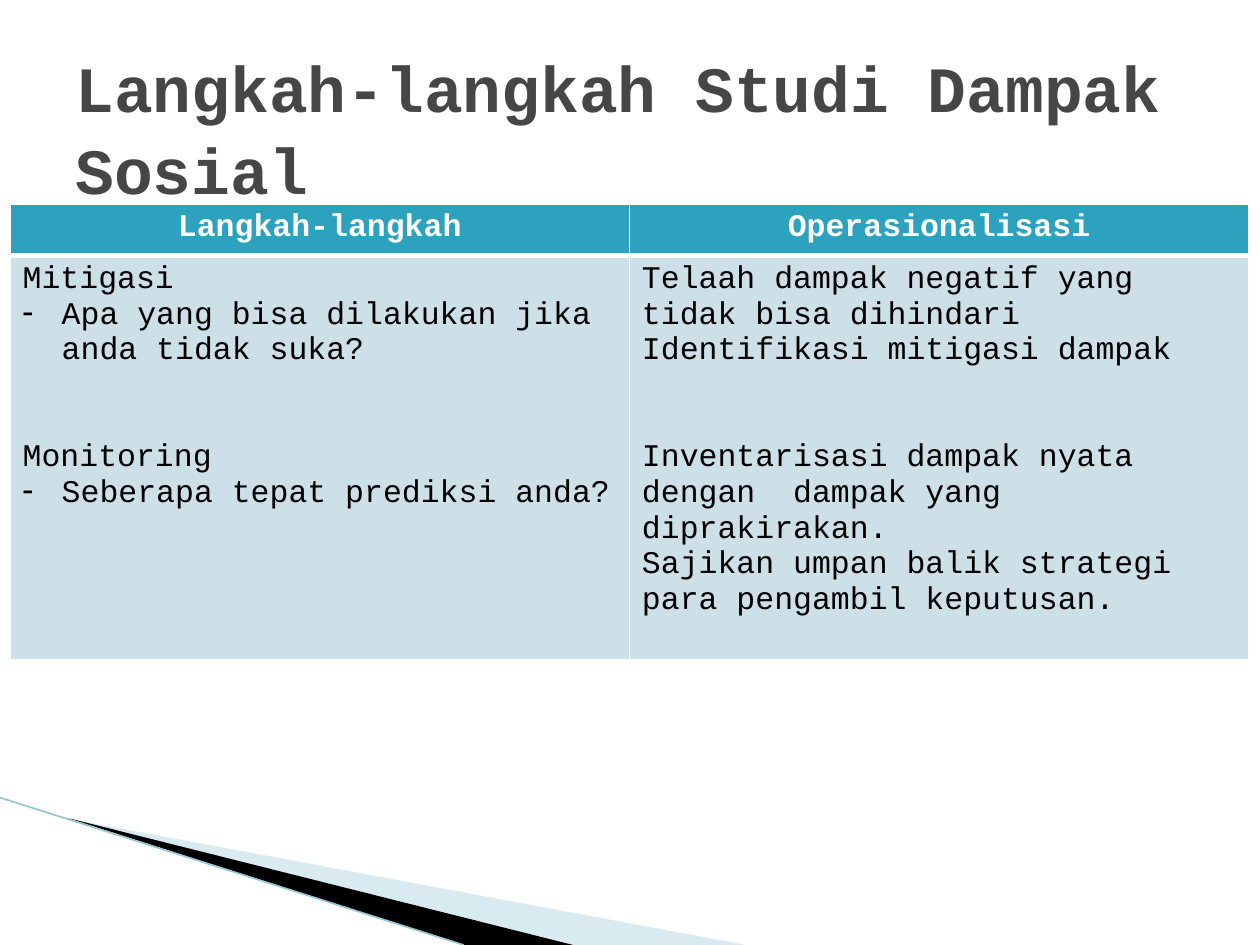
from lxml.etree import SubElement
from pptx import Presentation
from pptx.dml.color import RGBColor
from pptx.enum.shapes import MSO_CONNECTOR as CONN
from pptx.enum.text import MSO_ANCHOR as ANCHOR, PP_ALIGN as ALIGN
from pptx.oxml.ns import qn
from pptx.util import Inches, Pt

FONT = "Courier New"
COLORS = {
    "title": "464646", "text": "000000", "white": "FFFFFF",
    "header": "2DA2BF", "body": "CDE0E8",
    "pale": "A0CBDC", "dark": "000000", "edge": "97C5D8",
}
COLS, ROWS = 100, 75  # grid units on the slide
HANG = Inches(0.31)
GAP = 40.8  # two text lines between the steps

# Each paragraph: text, dash bullet, space before
HEADERS = ["Langkah-langkah", "Operasionalisasi"]
STEPS = [
    ("Mitigasi", False, 0),
    ("Apa yang bisa dilakukan jika anda tidak suka?", True, 0),
    ("Monitoring", False, GAP),
    ("Seberapa tepat prediksi anda?", True, 0),
]
OPERATIONS = [
    ("Telaah dampak negatif yang tidak bisa dihindari", False, 0),
    ("Identifikasi mitigasi dampak", False, 0),
    ("Inventarisasi dampak nyata dengan  dampak yang diprakirakan.", False, GAP),
    ("Sajikan umpan balik strategi para pengambil keputusan.", False, 0),
]


def rgb(name):
    return RGBColor.from_string(COLORS[name])


class SlideBuilder:
    def __init__(self, prs):
        self.s = prs.slides.add_slide(prs.slide_layouts[6])
        self.col = prs.slide_width / COLS
        self.row = prs.slide_height / ROWS

    def at(self, x, y):
        return round(x * self.col), round(y * self.row)

    def style(self, p, size, color, bold=False):
        for r in p.runs:
            r.font.name, r.font.size, r.font.bold = FONT, Pt(size), bold
            r.font.color.rgb = rgb(color)

    def polygon(self, points, color, opacity=None):
        start, *rest = [self.at(*pt) for pt in points]
        builder = self.s.shapes.build_freeform(*start)
        builder.add_line_segments(rest, close=True)
        sp = builder.convert_to_shape()
        sp.shadow.inherit = False
        sp.line.fill.background()
        sp.fill.solid()
        sp.fill.fore_color.rgb = rgb(color)
        if opacity:
            clr = sp.fill._xPr.find(qn("a:solidFill"))[0]
            SubElement(clr, qn("a:alpha"), val=str(opacity * 1000))

    def line(self, start, end, color, width):
        ln = self.s.shapes.add_connector(CONN.STRAIGHT, *self.at(*start), *self.at(*end))
        ln.line.color.rgb, ln.line.width = rgb(color), Pt(width)
        SubElement(ln._element.spPr, qn("a:effectLst"))

    def title(self, x, y, w, h, text, size):
        tf = self.s.shapes.add_textbox(*self.at(x, y), *self.at(w, h)).text_frame
        tf.word_wrap, tf.vertical_anchor = True, ANCHOR.MIDDLE
        tf.margin_top = Inches(0.19)
        p = tf.paragraphs[0]
        p.text, p.line_spacing = text, 1.06
        self.style(p, size, "title", bold=True)

    def cell(self, cell, paragraphs, fill, color, bottom, header=False):
        tcPr = cell._tc.get_or_add_tcPr()
        for side, width in zip("LRTB", (1, 1, 1, bottom)):
            ln = SubElement(tcPr, qn(f"a:ln{side}"), w=str(Pt(width)))
            SubElement(SubElement(ln, qn("a:solidFill")), qn("a:srgbClr"), val=COLORS["white"])
        cell.fill.solid()
        cell.fill.fore_color.rgb = rgb(fill)
        tf = cell.text_frame
        tf.text = "\n".join(text for text, _, _ in paragraphs)
        for p, (_, bullet, before) in zip(tf.paragraphs, paragraphs):
            if bullet:
                pPr = p._p.get_or_add_pPr()
                pPr.set("marL", str(HANG))
                pPr.set("indent", str(-HANG))
                SubElement(pPr, qn("a:buChar"), char="-")
            if before:
                p.space_before = Pt(before)
            p.alignment = ALIGN.CENTER if header else ALIGN.LEFT
            self.style(p, 18, color, bold=header)

    def table(self, x, y, w, heights, headers, bodies):
        frame = self.s.shapes.add_table(2, len(headers), *self.at(x, y), *self.at(w, sum(heights)))
        table = frame.table
        for row, height in zip(table.rows, heights):
            row.height = round(height * self.row)
        for i, (head, body) in enumerate(zip(headers, bodies)):
            self.cell(table.cell(0, i), [(head, False, 0)], "header", "white", 3, header=True)
            self.cell(table.cell(1, i), body, "body", "text", 1)


def main():
    prs = Presentation()
    prs.slide_width, prs.slide_height = Inches(10), Inches(7.5)
    slide = SlideBuilder(prs)

    # Corner wedges
    slide.polygon([(5.5, 65), (59.2, 75), (45.6, 75)], "pale", opacity=40)
    slide.polygon([(5.3, 64.9), (45.5, 75), (36.8, 75)], "dark")
    slide.line((0, 63.3), (36.8, 75), "edge", 0.95)

    # Table of steps and title
    slide.table(0.8, 16.2, 98.3, (4.1, 32.1), HEADERS, (STEPS, OPERATIONS))
    slide.title(5, 3, 90, 12.5, "Langkah-langkah Studi Dampak Sosial", 36.9)

    prs.save("out.pptx")


if __name__ == "__main__":
    main()
